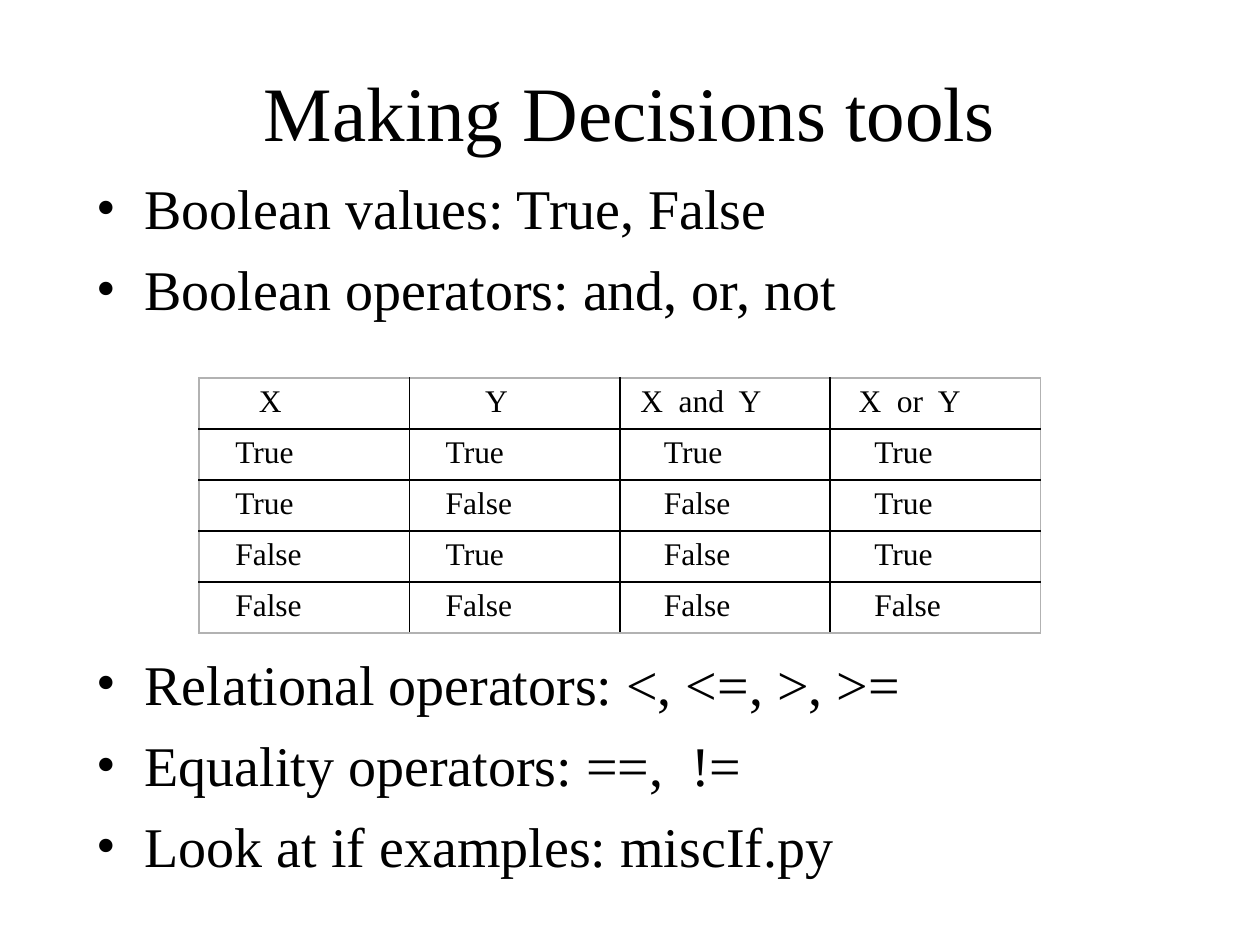
from lxml.etree import SubElement
from pptx import Presentation
from pptx.dml.color import RGBColor
from pptx.enum.text import MSO_ANCHOR, PP_ALIGN
from pptx.oxml.ns import qn
from pptx.util import Inches, Pt

FONT = "Times New Roman"
BLACK = RGBColor(0x00, 0x00, 0x00)
GREY = RGBColor(0xB2, 0xB2, 0xB2)

TITLE = "Making Decisions tools"
LINE_GAP = 8
TABLE_GAP = 187  # points kept free for the table between the two bullet groups
BULLETS = [
    ("Boolean values: True, False", LINE_GAP),
    ("Boolean operators: and, or, not", LINE_GAP),
    ("Relational operators: <, <=, >, >=", TABLE_GAP),
    ("Equality operators: ==,  !=", LINE_GAP),
    ("Look at if examples: miscIf.py", LINE_GAP),
]
HEADERS = ["X", "Y", "X  and  Y", "X  or  Y"]
OPERANDS = [(True, True), (True, False), (False, True), (False, False)]
ROWS = [HEADERS] + [[str(value) for value in (x, y, x and y, x or y)]
                    for x, y in OPERANDS]

TABLE_LEFT, TABLE_TOP = 1.58, 3
COLUMN_WIDTH, ROW_HEIGHT = 1.67, 0.405
CELL_MARGIN, INDENT_STEP = 0.1, 0.0625
HEADER_INDENTS = [6, 8, 1, 2]
VALUE_INDENTS = [3, 3, 4, 4]


def write(paragraph, text, size, align=PP_ALIGN.LEFT, space_before=0):
    paragraph.alignment = align
    paragraph.space_before = Pt(space_before)
    run = paragraph.add_run()
    run.text = text
    run.font.name = FONT
    run.font.size = Pt(size)
    run.font.color.rgb = BLACK


def add_bullet(paragraph, indent):
    properties = paragraph._p.get_or_add_pPr()
    properties.set("marL", str(Inches(indent)))
    properties.set("indent", str(-Inches(indent)))
    SubElement(properties, qn("a:buFont"), typeface=FONT)
    SubElement(properties, qn("a:buChar"), char="•")


def set_borders(cell, colors):
    """Draw the cell's sides, given as a dict of side letter to colour."""
    properties = cell._tc.get_or_add_tcPr()
    for position, (side, color) in enumerate(colors.items()):
        line = properties.makeelement(qn(f"a:ln{side}"), {"w": str(Pt(1))})
        fill = SubElement(line, qn("a:solidFill"))
        SubElement(fill, qn("a:srgbClr"), val=str(color))
        properties.insert(position, line)


def add_title(slide):
    title = slide.shapes.title
    title.left, title.top = Inches(0.75), Inches(0.25)
    title.width, title.height = Inches(8.5), Inches(1.25)
    title.text_frame.vertical_anchor = MSO_ANCHOR.MIDDLE
    write(title.text_frame.paragraphs[0], TITLE, 44, align=PP_ALIGN.CENTER)


def add_bullets(slide):
    box = slide.shapes.add_textbox(Inches(0.67), Inches(1.33),
                                   Inches(8.5), Inches(5.75))
    frame = box.text_frame
    frame.word_wrap = True
    for index, (text, gap) in enumerate(BULLETS):
        paragraph = frame.add_paragraph() if index else frame.paragraphs[0]
        write(paragraph, text, 32, space_before=gap)
        add_bullet(paragraph, 0.38)


def add_truth_table(slide):
    row_count, column_count = len(ROWS), len(HEADERS)
    table = slide.shapes.add_table(
        row_count, column_count, Inches(TABLE_LEFT), Inches(TABLE_TOP),
        Inches(COLUMN_WIDTH * column_count),
        Inches(ROW_HEIGHT * row_count)).table
    table.first_row = table.horz_banding = False
    for column in table.columns:
        column.width = Inches(COLUMN_WIDTH)
    for row, values in enumerate(ROWS):
        table.rows[row].height = Inches(ROW_HEIGHT)
        indents = VALUE_INDENTS if row else HEADER_INDENTS
        for column, (text, indent) in enumerate(zip(values, indents)):
            cell = table.cell(row, column)
            cell.fill.background()
            cell.margin_left = Inches(CELL_MARGIN + indent * INDENT_STEP)
            write(cell.text_frame.paragraphs[0], text, 18)
            set_borders(cell, {
                "L": BLACK if column else GREY,
                "R": BLACK if column < column_count - 1 else GREY,
                "T": BLACK if row else GREY,
                "B": BLACK if row < row_count - 1 else GREY,
            })


def main():
    presentation = Presentation()
    presentation.slide_width = Inches(10)
    presentation.slide_height = Inches(7.5)
    slide = presentation.slides.add_slide(presentation.slide_layouts[5])
    add_title(slide)
    add_bullets(slide)
    add_truth_table(slide)
    presentation.save("out.pptx")


if __name__ == "__main__":
    main()
